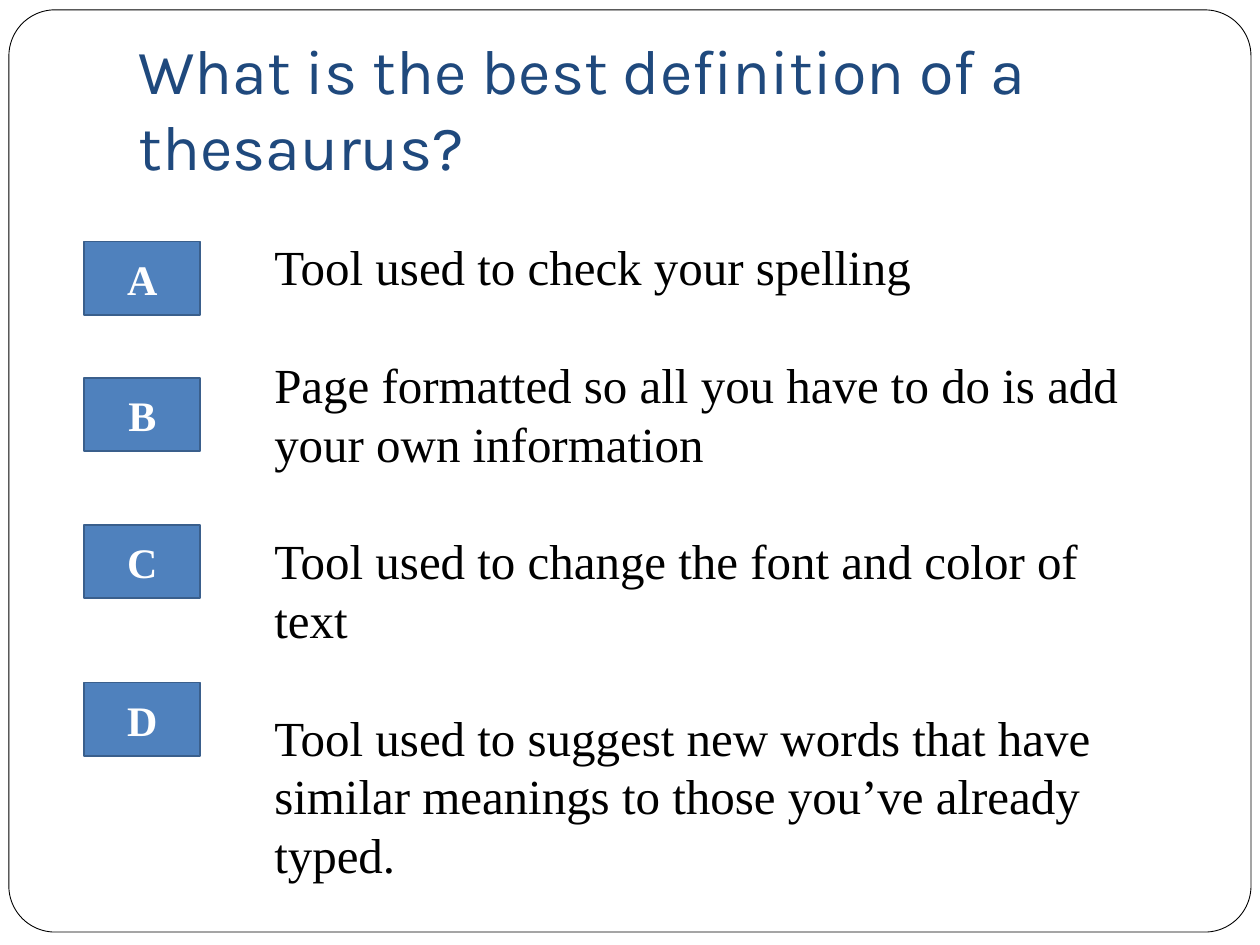
from pptx import Presentation
from pptx.dml.color import RGBColor
from pptx.enum.shapes import MSO_SHAPE
from pptx.enum.text import MSO_ANCHOR, MSO_AUTO_SIZE, PP_ALIGN
from pptx.util import Cm, Pt

HUES = {
    "page": "FFFFFF",
    "ink": "000000",
    "title": "1F497D",
    "key": "4F81BD",
    "edge": "3A5F8C",
}
SERIF = "Times New Roman"
TEXTS = [
    "Tool used to check your spelling",
    "Page formatted so all you have to do is add your own information",
    "Tool used to change the font and color of text",
    "Tool used to suggest new words that have similar meanings to those you’ve already typed.",
]
KEYS = {"A": 4.87, "B": 7.62, "C": 10.58, "D": 13.76}


def style(para, face, size, hue, bold=False):
    for run in para.runs:
        run.font.name = face
        run.font.size = Pt(size)
        run.font.bold = bold
        run.font.color.rgb = RGBColor.from_string(HUES[hue])


def block(kind, left, top, width, height, fill, line, weight):
    shape = slide.shapes.add_shape(kind, Cm(left), Cm(top), Cm(width), Cm(height))
    shape.shadow.inherit = False
    shape.fill.solid()
    shape.fill.fore_color.rgb = RGBColor.from_string(HUES[fill])
    shape.line.color.rgb = RGBColor.from_string(HUES[line])
    shape.line.width = Pt(weight)
    return shape


deck = Presentation()
deck.slide_width = Cm(25.4)
deck.slide_height = Cm(19.05)
slide = deck.slides.add_slide(deck.slide_layouts[6])

frame = block(MSO_SHAPE.ROUNDED_RECTANGLE, 0.18, 0.2, 25.04, 18.59, "page", "ink", 0.5)
frame.adjustments[0] = 0.05

title = slide.shapes.add_textbox(Cm(2.54), Cm(0.76), Cm(21.59), Cm(3.18)).text_frame
title.word_wrap = True
title.vertical_anchor = MSO_ANCHOR.BOTTOM
title.margin_bottom = Cm(0.25)
title.text = "What is the best definition of a thesaurus?"
style(title.paragraphs[0], "Karla", 36, "title")

body = slide.shapes.add_textbox(Cm(5.28), Cm(4.65), Cm(18.42), Cm(11.02)).text_frame
body.word_wrap = True
body.auto_size = MSO_AUTO_SIZE.SHAPE_TO_FIT_TEXT
body.text = "\n".join(TEXTS)
for para in body.paragraphs:
    para.line_spacing = Pt(33.6)
    para.space_after = Pt(33.6)
    style(para, SERIF, 28, "ink")
body.paragraphs[-1].space_after = Pt(0)

for key, top in KEYS.items():
    cell = block(MSO_SHAPE.RECTANGLE, 1.7, top, 2.34, 1.48, "key", "edge", 1).text_frame
    cell.vertical_anchor = MSO_ANCHOR.MIDDLE
    cell.text = key
    cell.paragraphs[0].alignment = PP_ALIGN.CENTER
    style(cell.paragraphs[0], SERIF, 24, "page", True)

deck.save("out.pptx")
